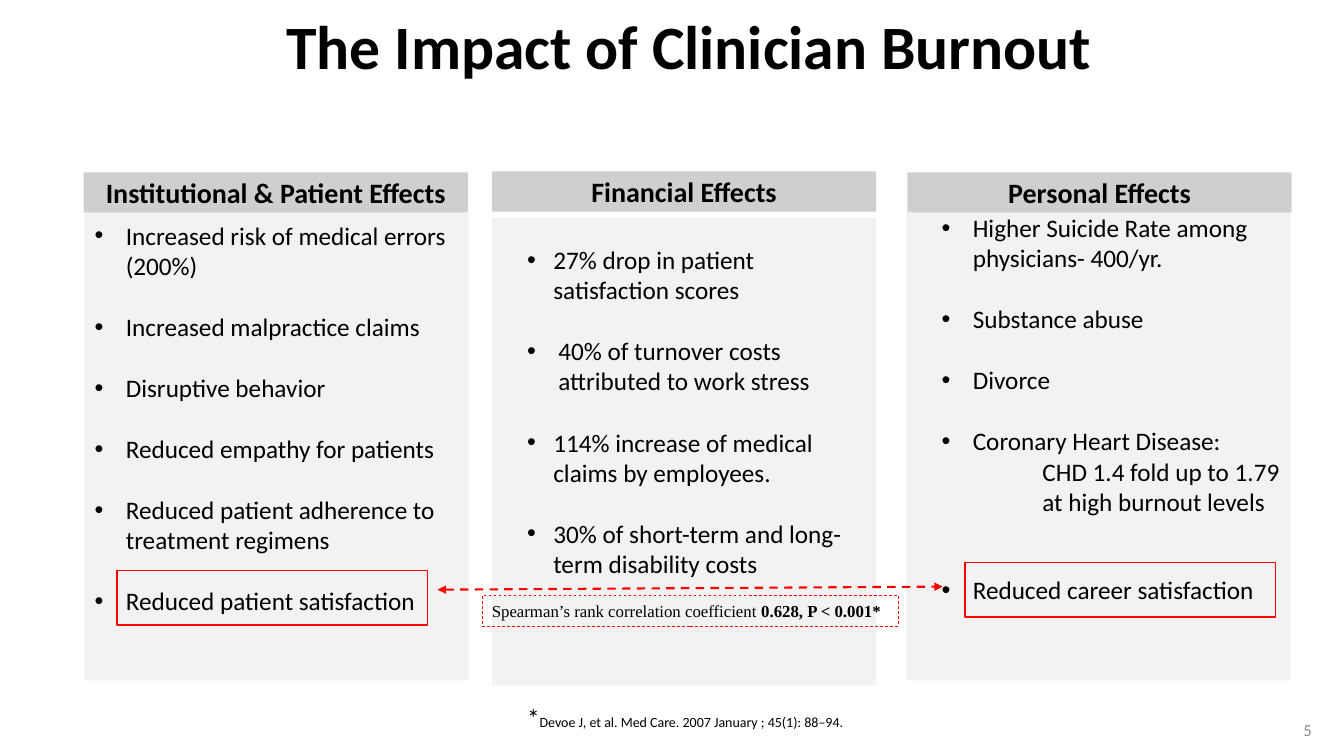
from lxml import etree
from pptx import Presentation
from pptx.dml.color import RGBColor
from pptx.enum import dml, shapes, text
from pptx.oxml import ns
from pptx.util import Inches, Pt

BLACK = RGBColor(0x00, 0x00, 0x00)
RED = RGBColor(0xFF, 0x00, 0x00)
HEADER_GRAY = RGBColor(0xD0, 0xCE, 0xCE)
PANEL_GRAY = RGBColor(0xF2, 0xF2, 0xF2)
NUMBER_GRAY = RGBColor(0x8C, 0x8C, 0x8C)
RECTANGLE = shapes.MSO_SHAPE.RECTANGLE
MIDDLE = text.MSO_ANCHOR.MIDDLE


def write(paragraph, words, size=18, bold=False, color=BLACK, font="Calibri",
          align=text.PP_ALIGN.LEFT):
    """Append words to a paragraph, with a line break at each newline."""
    paragraph.alignment = align
    for index, line in enumerate(words.split("\n")):
        if index:
            paragraph.add_line_break()
        run = paragraph.add_run()
        run.text = line
        run.font.size = Pt(size)
        run.font.bold = bold
        run.font.name = font
        run.font.color.rgb = color


def add_box(left, top, width, height, fill=None, line=None, line_width=1):
    """Add a flat rectangle with an optional fill and outline."""
    box = slide.shapes.add_shape(
        RECTANGLE, Inches(left), Inches(top), Inches(width), Inches(height))
    box.shadow.inherit = False
    for part, color in ((box.fill, fill), (box.line.fill, line)):
        if color is None:
            part.background()
        else:
            part.solid()
            part.fore_color.rgb = color
    if line is not None:
        box.line.width = Pt(line_width)
    box.text_frame.word_wrap = True
    return box


deck = Presentation()
deck.slide_width, deck.slide_height = Inches(13.33), Inches(7.5)
slide = deck.slides.add_slide(deck.slide_layouts[5])

# Title
title = slide.shapes.title
title.left, title.top = Inches(2.74), Inches(-0.23)
title.width, title.height = Inches(11.5), Inches(1.45)
title.text_frame.auto_size = text.MSO_AUTO_SIZE.NONE
title.text_frame.vertical_anchor = MIDDLE
title.text_frame.paragraphs[0].line_spacing = 0.9
write(title.text_frame.paragraphs[0], "The Impact of Clinician Burnout",
      size=44, bold=True)

# Effects: heading, header place, panel place, space below the list, and
# items as (words, text indent, hanging indent, space before in points)
GAP = 22
effects = [
    ("Institutional & Patient Effects", (0.83, 1.71), (0.84, 2.11), 0.64, [
        ("Increased risk of medical errors (200%)", 0.31, 0.31, 0),
        ("Increased malpractice claims", 0.31, 0.31, GAP),
        ("Disruptive behavior", 0.31, 0.31, GAP),
        ("Reduced empathy for patients", 0.31, 0.31, GAP),
        ("Reduced patient adherence to treatment regimens", 0.31, 0.31, GAP),
        ("Reduced patient satisfaction", 0.31, 0.31, GAP),
    ]),
    ("Financial Effects", (4.88, 1.7), (4.88, 2.16), 1.06, [
        ("27% drop in patient\nsatisfaction scores", 0.51, 0.26, 0),
        ("40% of turnover costs attributed to work stress", 0.56, 0.31, GAP),
        ("114% increase of medical claims by employees.", 0.51, 0.26, GAP),
        ("30% of short-term and long-term disability costs", 0.51, 0.26, GAP),
    ]),
    ("Personal Effects", (9, 1.71), (8.99, 2.11), 0.75, [
        ("Higher Suicide Rate among physicians- 400/yr.", 0.56, 0.31, 0),
        ("Substance abuse", 0.56, 0.31, GAP),
        ("Divorce", 0.56, 0.31, GAP),
        ("Coronary Heart Disease:", 0.56, 0.31, GAP),
        ("CHD 1.4 fold up to 1.79\nat high burnout levels", 1.25, 0, 0),
        ("Reduced career satisfaction", 0.56, 0.31, 41.5),
    ]),
]
for heading, header_place, panel_place, space_below, items in effects:
    header = add_box(*header_place, 3.81, 0.4, fill=HEADER_GRAY)
    header.text_frame.vertical_anchor = MIDDLE
    write(header.text_frame.paragraphs[0], heading, size=20, bold=True,
          align=text.PP_ALIGN.CENTER)

    panel = add_box(*panel_place, 3.81, 4.64, fill=PANEL_GRAY)
    body = panel.text_frame
    body.vertical_anchor = text.MSO_ANCHOR.BOTTOM
    body.margin_top, body.margin_bottom = 0, Inches(space_below)
    body.margin_right = Inches(0.05)
    for index, (words, indent, hanging, before) in enumerate(items):
        item = body.add_paragraph() if index else body.paragraphs[0]
        item.space_before = Pt(before)
        write(item, words)
        properties = item._p.get_or_add_pPr()
        properties.set("marL", str(Inches(indent)))
        properties.set("indent", str(-Inches(hanging)))
        if hanging:
            etree.SubElement(properties, ns.qn("a:buFont"), typeface="Arial")
            etree.SubElement(properties, ns.qn("a:buChar"), char="•")

# Frames around the two correlated effects
for left, top in ((1.16, 5.66), (9.57, 5.58)):
    add_box(left, top, 3.08, 0.54, line=RED)

# Dashed double arrow between them
correlation = slide.shapes.add_connector(
    shapes.MSO_CONNECTOR.STRAIGHT,
    Inches(4.34), Inches(5.85), Inches(9.35), Inches(5.82))
correlation.line.color.rgb = RED
correlation.line.width = Pt(1.5)
correlation.line.dash_style = dml.MSO_LINE.DASH
for end in ("a:headEnd", "a:tailEnd"):
    etree.SubElement(correlation.line._get_or_add_ln(), ns.qn(end),
                     type="triangle")
etree.SubElement(correlation._element.spPr, ns.qn("a:effectLst"))

# Correlation coefficient
coefficient = add_box(4.78, 5.91, 4.13, 0.3, line=RED, line_width=0.5)
coefficient.line.dash_style = dml.MSO_LINE.DASH
coefficient.text_frame.vertical_anchor = text.MSO_ANCHOR.TOP
for words, bold in (("Spearman’s rank correlation coefficient ", False),
                    ("0.628, P < 0.001*", True)):
    write(coefficient.text_frame.paragraphs[0], words, size=12, bold=bold,
          font="Times New Roman")

# Source note
citation = slide.shapes.add_textbox(
    Inches(5.13), Inches(6.92), Inches(6.83), Inches(0.4))
citation.text_frame.word_wrap = True
write(citation.text_frame.paragraphs[0], "*")
write(citation.text_frame.paragraphs[0],
      "Devoe J, et al. Med Care. 2007 January ; 45(1): 88–94.", size=10)

# Slide number
number = slide.shapes.add_textbox(
    Inches(12.59), Inches(7.04), Inches(0.52), Inches(0.4))
number.text_frame.word_wrap = True
number.text_frame.vertical_anchor = MIDDLE
write(number.text_frame.paragraphs[0], "5", size=12, color=NUMBER_GRAY,
      align=text.PP_ALIGN.RIGHT)

deck.save("out.pptx")
